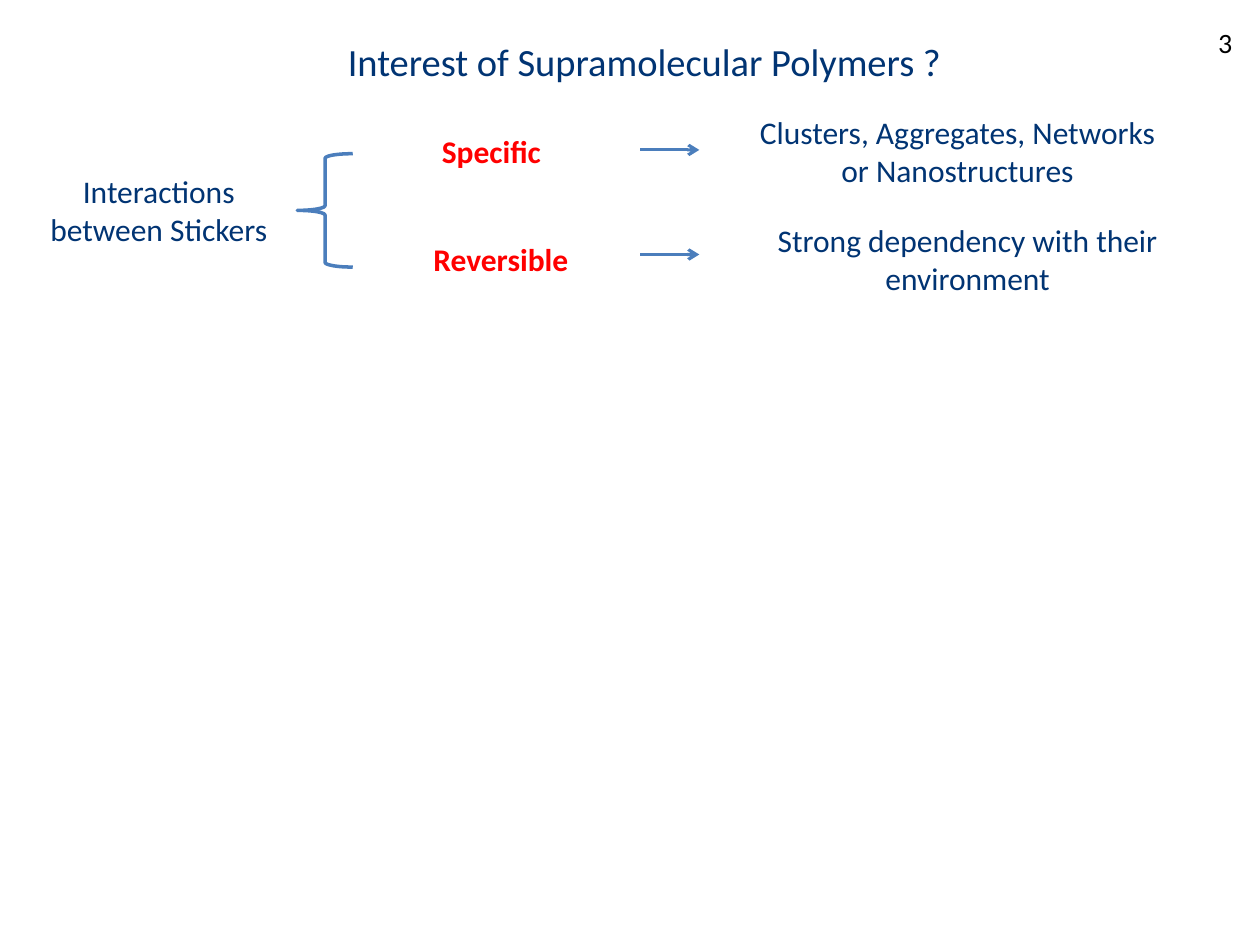
from lxml import etree
from pptx import Presentation
from pptx.dml.color import RGBColor
from pptx.enum.shapes import MSO_CONNECTOR, MSO_SHAPE
from pptx.enum.text import MSO_ANCHOR, MSO_AUTO_SIZE, PP_ALIGN
from pptx.oxml.ns import qn
from pptx.util import Inches, Pt

STRAIGHT = MSO_CONNECTOR.STRAIGHT
LEFT_BRACE = MSO_SHAPE.LEFT_BRACE
TOP, MIDDLE = MSO_ANCHOR.TOP, MSO_ANCHOR.MIDDLE
LEFT, CENTER = PP_ALIGN.LEFT, PP_ALIGN.CENTER
NO_FIT = MSO_AUTO_SIZE.NONE

COLORS = {"navy": "013473", "red": "FF0000", "blue": "4B7EBC", "black": "000000"}
FONT = "Calibri"
WIDTH, HEIGHT = 10, 7.5
ROW_HEIGHT = 0.55
ROW_TOP, ROW_STEP = 0.92, 0.86
ARROW_LEFT, ARROW_RIGHT = 5.08, 5.55
ROWS = [
    {"label": "Specific", "label_span": (3.19, 1.42), "arrow_y": 1.19,
     "effect": "Clusters, Aggregates, Networks\nor Nanostructures", "effect_left": 5.71},
    {"label": "Reversible", "label_span": (3.03, 1.89), "arrow_y": 2.02,
     "effect": "Strong dependency with their environment", "effect_left": 5.79},
]


def color(name):
    """Return the named colour."""
    return RGBColor.from_string(COLORS[name])


def fill_text(shape, text, size=18, ink="navy", bold=False, align=CENTER, anchor=MIDDLE, wrap=True):
    """Put formatted text into a shape."""
    frame = shape.text_frame
    frame.text = text
    frame.word_wrap = wrap
    frame.auto_size = NO_FIT
    frame.vertical_anchor = anchor
    for para in frame.paragraphs:
        para.alignment = align
        for span in para.runs:
            span.font.name = FONT
            span.font.size = Pt(size)
            span.font.bold = bold
            span.font.color.rgb = color(ink)


def add_label(page, box, text, **style):
    """Add a text box that fills the given box."""
    fill_text(page.shapes.add_textbox(*map(Inches, box)), text, **style)


def add_heading(page, box):
    """Place the title in its box."""
    title = page.shapes.title
    title.left, title.top, title.width, title.height = map(Inches, box)
    fill_text(title, "Interest of Supramolecular Polymers ?", size=22)


def add_brace(page, box):
    """Add the brace that splits the interactions into two kinds."""
    brace = page.shapes.add_shape(LEFT_BRACE, *map(Inches, box))
    brace.shadow.inherit = False
    brace.fill.background()
    brace.line.color.rgb = color("blue")
    brace.line.width = Pt(2)


def add_arrow(page, left, right, y):
    """Add a horizontal arrow pointing right."""
    arrow = page.shapes.add_connector(STRAIGHT, *map(Inches, (left, y, right, y)))
    arrow.line.color.rgb = color("blue")
    arrow.line.width = Pt(1.75)
    etree.SubElement(arrow.line._get_or_add_ln(), qn("a:tailEnd"), type="arrow")
    etree.SubElement(arrow._element.spPr, qn("a:effectLst"))


def add_row(page, top, row):
    """Add one property, its arrow and its effect."""
    left, width = row["label_span"]
    add_label(page, (left, top, width, ROW_HEIGHT), row["label"], ink="red", bold=True)
    add_arrow(page, ARROW_LEFT, ARROW_RIGHT, row["arrow_y"])
    add_label(page, (row["effect_left"], top, 3.78, ROW_HEIGHT), row["effect"])


def main():
    """Build and save the deck."""
    deck = Presentation()
    deck.slide_width, deck.slide_height = Inches(WIDTH), Inches(HEIGHT)
    page = deck.slides.add_slide(deck.slide_layouts.get_by_name("Title Only"))
    add_heading(page, (2.4, 0.21, 5.43, ROW_HEIGHT))
    add_label(page, (0.12, 1.39, 2.28, ROW_HEIGHT), " Interactions \nbetween Stickers")
    add_brace(page, (2.36, 1.22, 0.44, 0.9))
    for index, row in enumerate(ROWS):
        add_row(page, ROW_TOP + index * ROW_STEP, row)
    add_label(page, (9.57, 0.15, 0.32, 0.37), "3", size=16, ink="black",
              align=LEFT, anchor=TOP, wrap=False)
    deck.save("out.pptx")


if __name__ == "__main__":
    main()
